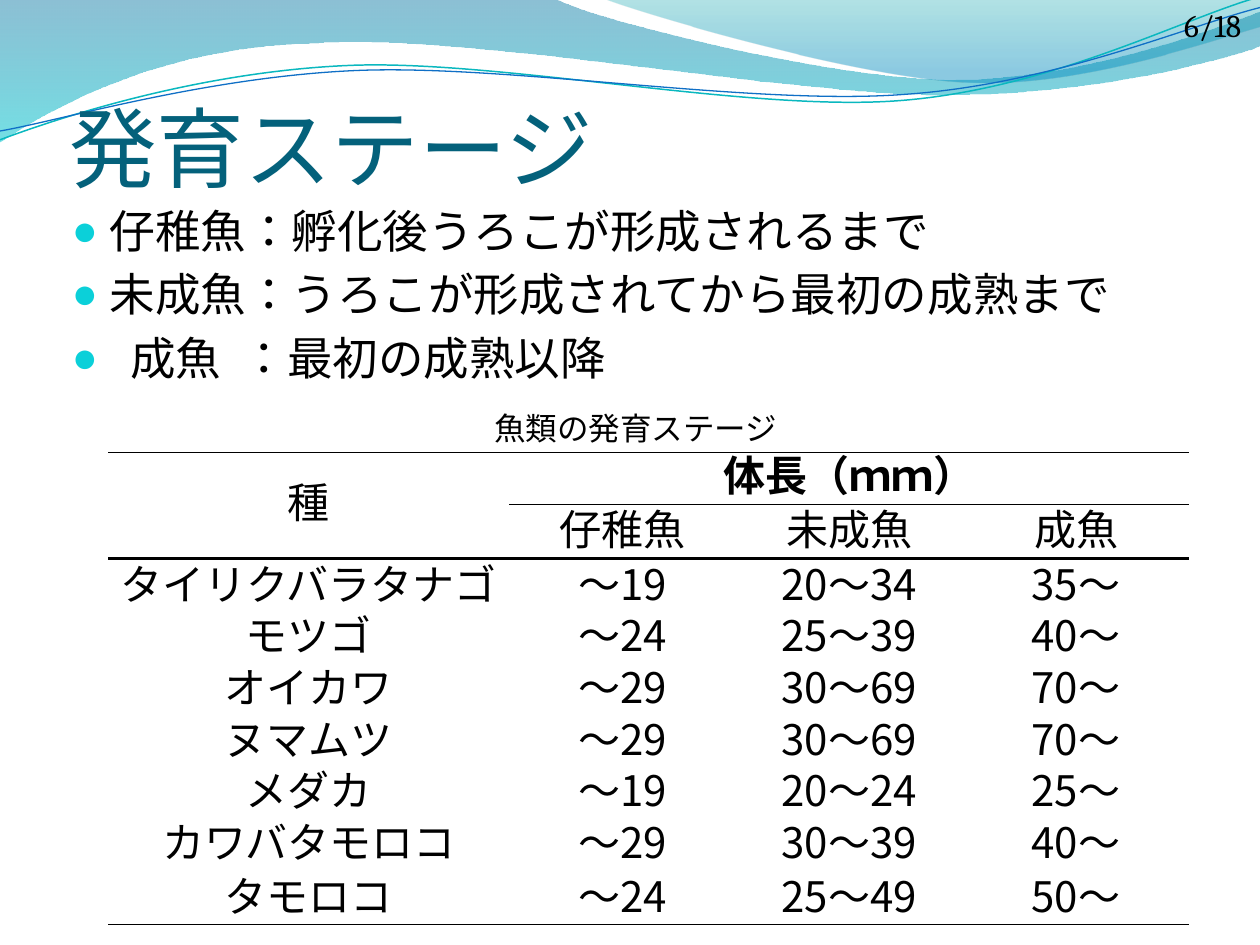
"""Build a slide that defines fish growth stages and tabulates body length by species."""
import lxml.etree
import pptx
import pptx.dml.color
import pptx.enum.lang
import pptx.enum.text
import pptx.oxml.ns
import pptx.util
from dataclasses import dataclass

Inches = pptx.util.Inches
Pt = pptx.util.Pt
RGB = pptx.dml.color.RGBColor.from_string
Align = pptx.enum.text.PP_ALIGN
Anchor = pptx.enum.text.MSO_ANCHOR
qn = pptx.oxml.ns.qn
add_node = lxml.etree.SubElement


@dataclass(frozen=True)
class Theme:
    ink: str = "000000"
    title: str = "04617B"
    bullet: str = "0BD0D9"
    teal_line: str = "0AB8BF"
    blue_line: str = "0F6FC6"
    wide_wave: tuple = ((0, "0074A1", 45), (1, "00C6CF", 55))
    right_wave: tuple = ((0, "00A1A9", 30), (0.8, "008BBF", 45))
    title_font: str = "Calibri"
    body_font: str = "TeX Gyre Pagella"
    table_font: str = "Noto Sans CJK JP"
    number_font: str = "Cambria"
    title_size: int = 50
    body_size: int = 26
    table_size: int = 24
    small_size: int = 18
    plain_table: str = "{2D5ABB26-0587-4C30-8999-92F81FD0307C}"


theme = Theme()


def write(para, text, font, size, east_font=theme.title_font, color=theme.ink, bold=False, align=Align.LEFT):
    span = para.add_run()
    span.text = text
    span.font.name = font
    span.font.size = Pt(size)
    span.font.bold = bold
    span.font.color.rgb = RGB(color)
    span.font.language_id = pptx.enum.lang.MSO_LANGUAGE_ID.JAPANESE
    add_node(span.font._element, qn("a:ea")).set("typeface", east_font)
    para.alignment = align


def draw_path(page, place, start, segments, closed):
    left, top, width, height = map(Inches, place)
    builder = page.shapes.build_freeform(left, top)
    builder.add_line_segments([(left + width, top + height)], close=closed)
    shape = builder.convert_to_shape()
    shape.shadow.inherit = False
    outline = next(shape.element.iter(qn("a:path")))
    for node in list(outline):
        outline.remove(node)
    steps = [("a:moveTo", start)]
    steps += [("a:lnTo" if len(segment) == 2 else "a:cubicBezTo", segment) for segment in segments]
    for tag, numbers in steps:
        step = add_node(outline, qn(tag))
        for x, y in zip(numbers[::2], numbers[1::2]):
            add_node(step, qn("a:pt"), x=str(Inches(x) - left), y=str(Inches(y) - top))
    if closed:
        add_node(outline, qn("a:close"))
    return shape


deck = pptx.Presentation()
deck.slide_width = Inches(10)
deck.slide_height = Inches(7.5)
page = deck.slides.add_slide(deck.slide_layouts[1])

waves = [
    ((-0.01, -0.01, 10.02, 1.14), (0, 0),
     [(4.4, -0.01), (4.76, 0.17, 6.64, 0.63, 7.58, 0.63),
      (8.53, 0.63, 9.58, 0.26, 10, 0.09), (10.01, 0.36),
      (9.83, 0.44, 8.7, 0.76, 7.46, 0.75), (6.22, 0.75, 3.82, 0.28, 2.57, 0.34),
      (1.29, 0.36, 0.46, 0.83, -0.01, 1.13), (0, 0)], theme.wide_wave),
    ((4.79, -0.01, 5.21, 0.7), (4.79, -0.01),
     [(5.09, 0.11, 6.82, 0.62, 7.69, 0.65), (8.56, 0.69, 9.61, 0.32, 10, 0.21),
      (10, 0), (4.79, -0.01)], theme.right_wave),
]
for place, start, segments, stops in waves:
    wave = draw_path(page, place, start, segments, closed=True)
    wave.line.fill.background()
    wave.fill.gradient()
    wave.fill.gradient_angle = 270
    for stop, (position, color, opacity) in zip(wave.fill.gradient_stops, stops):
        stop.position = position
        stop.color.rgb = RGB(color)
    for node, (position, color, opacity) in zip(wave.element.iter(qn("a:srgbClr")), stops):
        add_node(node, qn("a:alpha")).set("val", str(opacity * 1000))

curves = [
    ((0, -0.02, 9.98, 1.13), (0, 1.11),
     [(0.48, 0.93, 1.58, 0.57, 2.77, 0.52), (3.95, 0.47, 5.93, 0.89, 7.13, 0.8),
      (8.33, 0.71, 9.38, 0.15, 9.98, -0.02)], theme.teal_line, 0.85),
    ((0, 0.06, 10, 0.98), (0, 1.04),
     [(0.47, 0.96, 1.64, 0.61, 2.83, 0.56), (4.03, 0.51, 5.97, 0.84, 7.17, 0.75),
      (8.36, 0.67, 9.41, 0.21, 10, 0.06)], theme.blue_line, 0.75),
]
for place, start, segments, color, width in curves:
    curve = draw_path(page, place, start, segments, closed=False)
    curve.fill.background()
    curve.line.color.rgb = RGB(color)
    curve.line.width = Pt(width)

title, body = page.placeholders
for box, place in ((title, (0.55, 0.55, 9, 1.03)), (body, (0.47, 1.56, 9, 1.64))):
    page.shapes.element.append(box.element)
    box.left, box.top, box.width, box.height = map(Inches, place)
    box.text_frame.word_wrap = True
    box.text_frame.auto_size = pptx.enum.text.MSO_AUTO_SIZE.NONE

frame = title.text_frame
frame.vertical_anchor = Anchor.BOTTOM
frame.margin_left = frame.margin_right = frame.margin_bottom = 0
write(frame.paragraphs[0], "発育ステージ", theme.title_font, theme.title_size, color=theme.title)

stages = ["仔稚魚：孵化後うろこが形成されるまで", "未成魚：うろこが形成されてから最初の成熟まで", "  成魚  ：最初の成熟以降"]
for index, stage in enumerate(stages):
    para = body.text_frame.paragraphs[0] if index == 0 else body.text_frame.add_paragraph()
    write(para, stage, theme.body_font, theme.body_size)
    para.space_before = Pt(5.2)
    properties = para._p.get_or_add_pPr()
    properties.set("marL", str(Inches(0.3)))
    properties.set("indent", str(Inches(-0.3)))
    add_node(add_node(properties, qn("a:buClr")), qn("a:srgbClr")).set("val", theme.bullet)
    add_node(properties, qn("a:buSzPct")).set("val", "95000")
    add_node(properties, qn("a:buChar")).set("char", "●")

labels = [
    ("　魚類の発育ステージ", (2.34, 3.2, 5.16, 0.4), theme.body_font, Align.CENTER),
    ("6/18", (9.3, 0, 0.7, 0.4), theme.number_font, Align.LEFT),
]
for text, place, font, align in labels:
    box = page.shapes.add_textbox(*map(Inches, place))
    box.text_frame.word_wrap = True
    write(box.text_frame.paragraphs[0], text, font, theme.small_size, align=align)

rows = [
    ("種", "体長（ｍｍ）", "", ""),
    ("", "仔稚魚", "未成魚", "成魚"),
    ("タイリクバラタナゴ", "～19", "20～34", "35～"),
    ("モツゴ", "～24", "25～39", "40～"),
    ("オイカワ", "～29", "30～69", "70～"),
    ("ヌマムツ", "～29", "30～69", "70～"),
    ("メダカ", "～19", "20～24", "25～"),
    ("カワバタモロコ", "～29", "30～39", "40～"),
    ("タモロコ", "～24", "25～49", "50～"),
]
row_heights = [0.41, 0.43, 0.43, 0.41, 0.41, 0.41, 0.41, 0.41, 0.43]
rule_widths = {0: 1, 1: 0.5, 2: 2, len(rows): 1}
holder = page.shapes.add_table(len(rows), 4, Inches(0.86), Inches(3.59), Inches(8.59), Inches(3.75))
next(holder.element.iter(qn("a:tableStyleId"))).text = theme.plain_table
table = holder.table
table.first_row = table.horz_banding = False
for column, width in zip(table.columns, (3.18, 1.8, 1.8, 1.8)):
    column.width = Inches(width)
table.cell(0, 0).merge(table.cell(1, 0))
table.cell(0, 1).merge(table.cell(0, 3))
for row_index, row in enumerate(rows):
    table.rows[row_index].height = Inches(row_heights[row_index])
    for column_index, text in enumerate(row):
        cell = table.cell(row_index, column_index)
        cell.margin_left = cell.margin_right = cell.margin_top = cell.margin_bottom = 0
        cell.vertical_anchor = Anchor.MIDDLE if text == "種" else Anchor.BOTTOM
        above, below = rule_widths.get(row_index), rule_widths.get(row_index + 1)
        if column_index == 0 and row_index < 2:
            above, below = (rule_widths[0], rule_widths[2])
        for side, width in (("a:lnL", None), ("a:lnR", None), ("a:lnT", above), ("a:lnB", below)):
            border = add_node(cell._tc.get_or_add_tcPr(), qn(side), w=str(Pt(width or 0)))
            paint = add_node(border, qn("a:solidFill" if width else "a:noFill"))
            if width:
                add_node(paint, qn("a:srgbClr")).set("val", theme.ink)
        cell.fill.background()
        para = cell.text_frame.paragraphs[0]
        para.line_spacing = Pt(29)
        if text:
            write(para, text, theme.table_font, theme.table_size, east_font=theme.table_font,
                  bold=text == "体長（ｍｍ）", align=Align.CENTER)
        else:
            para.font.size = Pt(theme.table_size)

deck.save("out.pptx")
